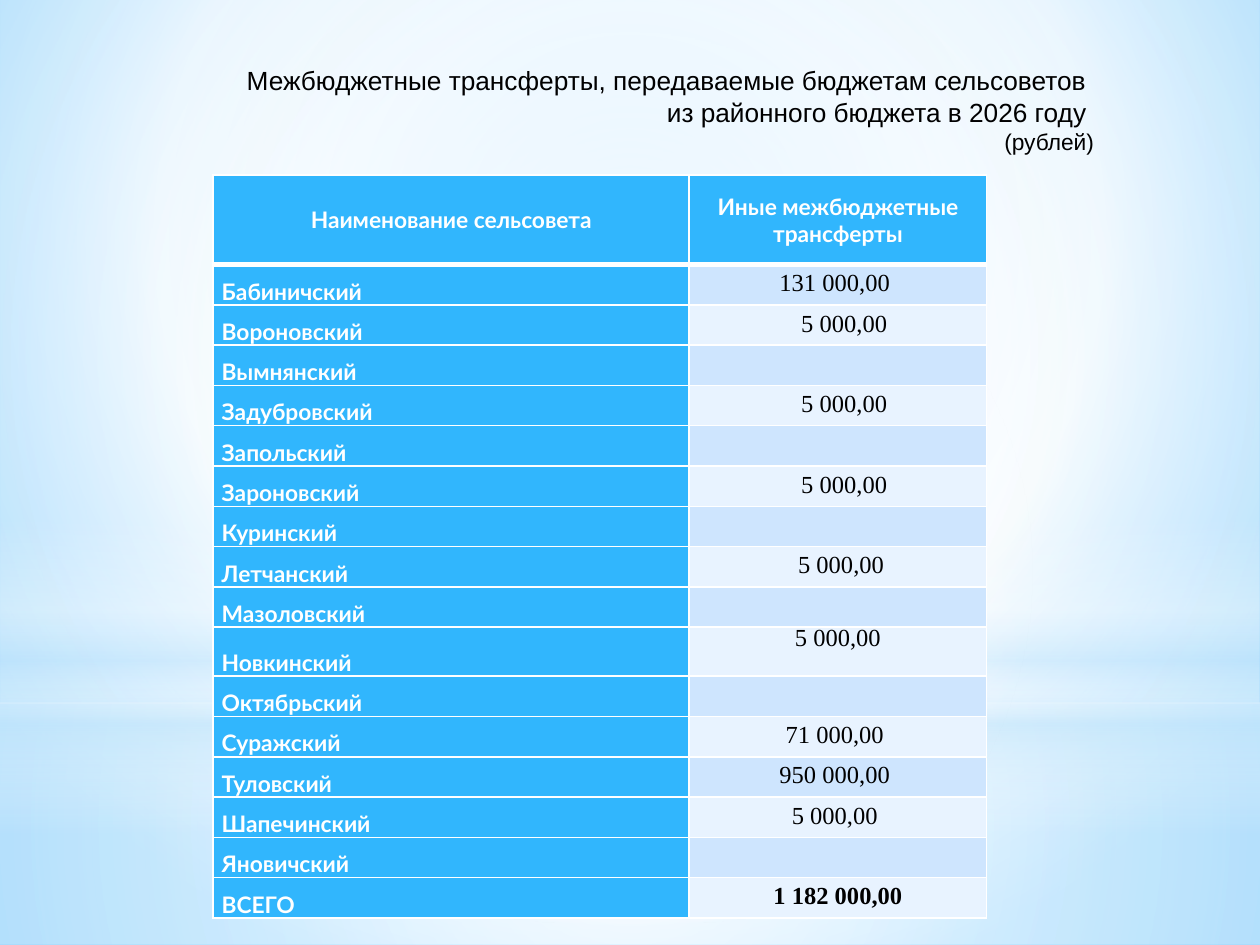
from lxml import etree
from pptx import Presentation
from pptx.dml.color import RGBColor
from pptx.enum.shapes import MSO_SHAPE
from pptx.enum.text import MSO_ANCHOR, PP_ALIGN
from pptx.oxml.ns import qn
from pptx.util import Pt

RECT, OVAL = MSO_SHAPE.RECTANGLE, MSO_SHAPE.OVAL
TOP, MID, LOW = MSO_ANCHOR.TOP, MSO_ANCHOR.MIDDLE, MSO_ANCHOR.BOTTOM
LEFT, MIDDLE, RIGHT = PP_ALIGN.LEFT, PP_ALIGN.CENTER, PP_ALIGN.RIGHT
PX = 9144
WHITE, BLACK, BLUE, PALE = "FFFFFF", "000000", "31B6FD", "C6E7FC"
BANDS = ("CEE5FE", "E8F3FF")
CORE = (50, 50, 50, 50)
ROW, TALL, HEAD = 32, 39, 71

TITLE = [
    ("Межбюджетные трансферты, передаваемые бюджетам сельсоветов ", 15),
    ("из районного бюджета в 2026 году ", 15),
    ("(рублей)", 13),
]
HEADS = ("Наименование сельсовета", "Иные межбюджетные трансферты")
ROWS = [
    ("Бабиничский", "131 000,00", -5),
    ("Вороновский", "5 000,00", 10),
    ("Вымнянский", "", 0),
    ("Задубровский", "5 000,00", 10),
    ("Запольский", "", 0),
    ("Зароновский", "5 000,00", 10),
    ("Куринский", "", 0),
    ("Летчанский", "5 000,00", 5),
    ("Мазоловский", "", 0),
    ("Новкинский", "5 000,00", 0),
    ("Октябрьский", "", 0),
    ("Суражский", "71 000,00", -5),
    ("Туловский", "950 000,00", -5),
    ("Шапечинский", "5 000,00", -5),
    ("Яновичский", "", 0),
    ("ВСЕГО", "1 182 000,00", 0),
]


def paint(code):
    return RGBColor.from_string(code)


def blend(stops, focus=None):
    """Return a gradient fill, radial when a focus is given."""
    grad = etree.Element(qn("a:gradFill"), rotWithShape="1")
    marks = etree.SubElement(grad, qn("a:gsLst"))
    for pos, code, clear in stops:
        mark = etree.SubElement(marks, qn("a:gs"), pos=str(pos * 1000))
        tint = etree.SubElement(mark, qn("a:srgbClr"), val=code)
        etree.SubElement(tint, qn("a:alpha"), val=str(clear * 1000))
    if focus:
        way = etree.SubElement(grad, qn("a:path"), path="circle")
        sides = {side: str(n * 1000) for side, n in zip("ltrb", focus)}
        etree.SubElement(way, qn("a:fillToRect"), **sides)
    else:
        etree.SubElement(grad, qn("a:lin"), ang="5400000", scaled="0")
    return grad


class Deck:
    """Hold the style and the current slide."""

    def __init__(self, wide, high):
        self.show = Presentation()
        self.show.slide_width, self.show.slide_height = wide * PX, high * PX
        self.slide = self.show.slides.add_slide(self.show.slide_layouts[6])

    def back(self, stops, focus):
        self.slide.background.fill.solid()
        base = self.slide._element.find(".//" + qn("p:bgPr"))
        base.replace(base.find(qn("a:solidFill")), blend(stops, focus))

    def glow(self, kind, place, stops, focus=None):
        shape = self.slide.shapes.add_shape(kind, *[n * PX for n in place])
        shape.shadow.inherit = False
        shape.line.fill.background()
        shape.fill.background()
        props = shape._element.spPr
        props.replace(props.find(qn("a:noFill")), blend(stops, focus))

    def style(self, para, face, size, code, bold, align):
        para.alignment = align
        font = para.font
        font.name, font.size, font.bold = face, Pt(size), bold
        font.color.rgb = paint(code)

    def text(self, place, lines):
        box = self.slide.shapes.add_textbox(*[n * PX for n in place])
        frame = box.text_frame
        frame.word_wrap, frame.vertical_anchor = True, MID
        for i, (words, size) in enumerate(lines):
            para = frame.add_paragraph() if i else frame.paragraphs[0]
            para.text = words
            self.style(para, "Arial", size, BLACK, False, RIGHT)

    def grid(self, place, cols, highs):
        spot = [n * PX for n in place]
        table = self.slide.shapes.add_table(len(highs), len(cols), *spot).table
        for col, wide in zip(table.columns, cols):
            col.width = wide * PX
        for row, high in zip(table.rows, highs):
            row.height = high * PX
        return table

    def cell(self, cell, words, fill, anchor, shift=0, edges=(1, 1, 1, 1)):
        cell.margin_left = (7 + max(shift, 0)) * PX
        cell.margin_right = (7 + max(-shift, 0)) * PX
        cell.margin_top = cell.margin_bottom = 0
        cell.vertical_anchor = anchor
        props = cell._tc.get_or_add_tcPr()
        for side, thick in zip("LRTB", edges):
            line = etree.SubElement(props, qn("a:ln" + side), w=str(Pt(thick)))
            solid = etree.SubElement(line, qn("a:solidFill"))
            etree.SubElement(solid, qn("a:srgbClr"), val=WHITE)
        cell.fill.solid()
        cell.fill.fore_color.rgb = paint(fill)
        para = cell.text_frame.paragraphs[0]
        if words:
            para.text = words
        return para

    def label(self, cell, words, anchor, align, edges=(1, 1, 1, 1)):
        para = self.cell(cell, words, BLUE, anchor, 0, edges)
        self.style(para, "Lato", 13, WHITE, True, align)

    def value(self, cell, words, fill, anchor, shift, bold):
        para = self.cell(cell, words, fill, anchor, shift)
        para.line_spacing = Pt(14)
        self.style(para, "Times New Roman", 14, BLACK, bold, MIDDLE)


def main():
    deck = Deck(1000, 750)
    deck.back([(0, "B0E0FF", 100), (60, WHITE, 100), (100, "6BC5FF", 100)],
              (20, 10, 20, 60))
    deck.glow(RECT, (0, 558, 1000, 192),
              [(0, WHITE, 91), (37, WHITE, 76), (100, PALE, 79)], CORE)
    deck.glow(RECT, (0, 0, 1000, 558),
              [(0, WHITE, 89), (48, WHITE, 62), (100, PALE, 79)], CORE)
    deck.glow(RECT, (0, 412, 1000, 250),
              [(0, WHITE, 0), (29, WHITE, 30), (45, PALE, 40),
               (55, WHITE, 26), (65, PALE, 60), (100, WHITE, 0)])
    deck.glow(OVAL, (0, 175, 1000, 558),
              [(0, WHITE, 100), (56, WHITE, 0)], CORE)

    tall = [name == "Новкинский" for name, _, _ in ROWS]
    highs = [HEAD] + [TALL if big else ROW for big in tall]
    table = deck.grid((169, 139, 614, sum(highs)), (378, 236), highs)
    for i, words in enumerate(HEADS):
        deck.label(table.cell(0, i), words, MID, MIDDLE, (1, 1, 1, 3))
    for i, (name, sum_, shift) in enumerate(ROWS):
        deck.label(table.cell(i + 1, 0), name, LOW, LEFT)
        deck.value(table.cell(i + 1, 1), sum_, BANDS[i % 2],
                   TOP if tall[i] else MID, shift, name == "ВСЕГО")

    deck.text((145, 46, 733, 82), TITLE)
    deck.show.save("out.pptx")


if __name__ == "__main__":
    main()
